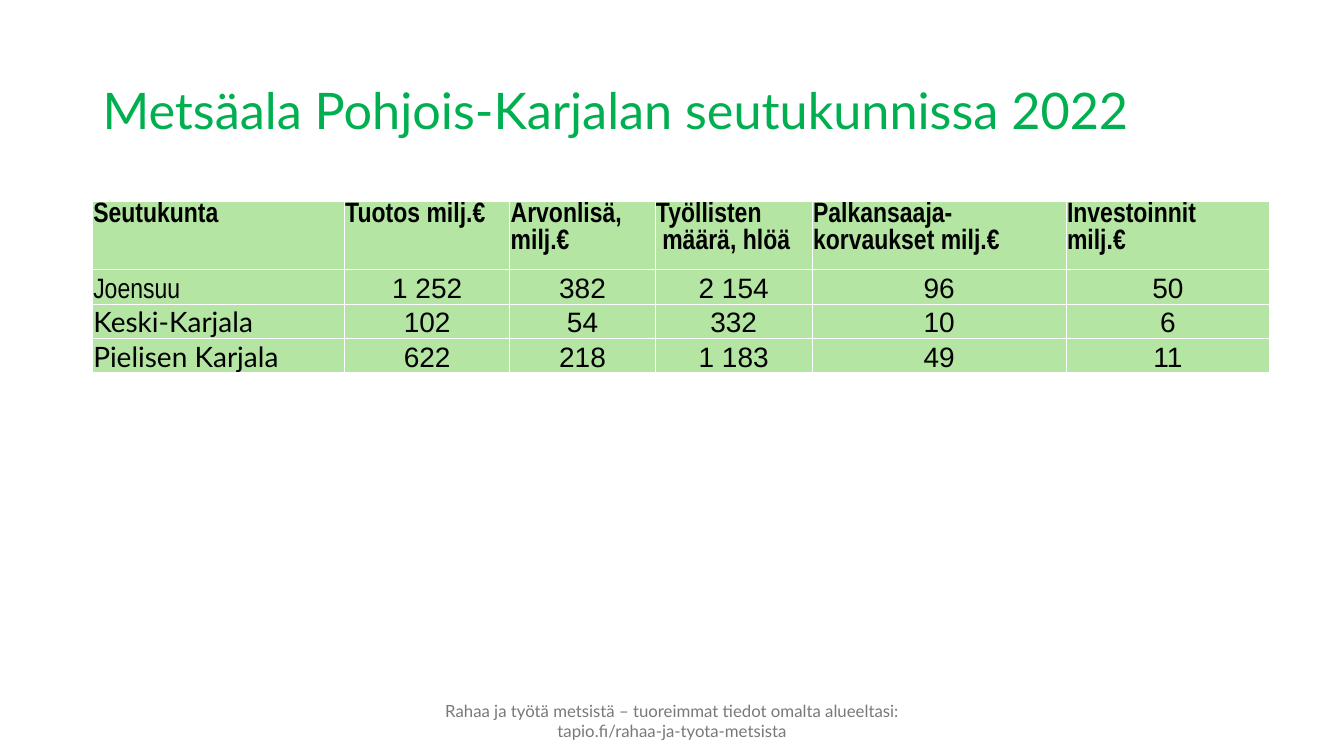
import dataclasses

import pptx
import pptx.dml.color
import pptx.enum.text
import pptx.oxml
import pptx.oxml.ns
import pptx.util

Cm = pptx.util.Cm
Pt = pptx.util.Pt
PP_ALIGN = pptx.enum.text.PP_ALIGN
MSO_ANCHOR = pptx.enum.text.MSO_ANCHOR


@dataclasses.dataclass(frozen=True)
class Theme:
    title: str = "00B050"
    footer: str = "797979"
    text: str = "000000"
    cell: str = "B4E5A2"
    border: str = "FFFFFF"
    title_size: int = 36
    table_size: int = 20
    footer_size: int = 12
    font: str = "Lato"
    narrow: str = "Arial Narrow"
    number: str = "Arial"


theme = Theme()


def add_run(p, text, font, size, color, bold=False):
    r = p.add_run()
    r.text = text
    r.font.name = font
    r.font.size = Pt(size)
    r.font.bold = bold
    r.font.color.rgb = pptx.dml.color.RGBColor.from_string(color)


def add_borders(cell):
    tc_pr = cell._tc.get_or_add_tcPr()
    for i, side in enumerate(("lnL", "lnR", "lnT", "lnB")):
        ln = pptx.oxml.parse_xml(
            f'<a:{side} {pptx.oxml.ns.nsdecls("a")} w="{Pt(1)}"><a:solidFill>'
            f'<a:srgbClr val="{theme.border}"/></a:solidFill></a:{side}>'
        )
        tc_pr.insert(i, ln)


prs = pptx.Presentation()
prs.slide_width = Cm(33.87)
prs.slide_height = Cm(19.05)
s = prs.slides.add_slide(prs.slide_layouts[5])

title = s.shapes.title
title.left, title.top, title.width, title.height = Cm(2.33), Cm(1.01), Cm(29.21), Cm(3.68)
tf = title.text_frame
tf.word_wrap = True
tf.auto_size = pptx.enum.text.MSO_AUTO_SIZE.NONE
tf.vertical_anchor = MSO_ANCHOR.MIDDLE
p = tf.paragraphs[0]
p.alignment = PP_ALIGN.LEFT
p.line_spacing = 0.9
p.space_before = Pt(0)
add_run(p, "Metsäala Pohjois-Karjalan seutukunnissa 2022", theme.font, theme.title_size, theme.title)

footer = s.shapes.add_textbox(Cm(10.82), Cm(17.66), Cm(12.24), Cm(1.01))
tf = footer.text_frame
tf.word_wrap = True
tf.vertical_anchor = MSO_ANCHOR.MIDDLE
p = tf.paragraphs[0]
p.alignment = PP_ALIGN.CENTER
add_run(
    p,
    "Rahaa ja työtä metsistä – tuoreimmat tiedot omalta alueeltasi: tapio.fi/rahaa-ja-tyota-metsista",
    theme.font, theme.footer_size, theme.footer,
)

rows = [
    ["Seutukunta", "Tuotos milj.€", "Arvonlisä, milj.€", "Työllisten\n määrä, hlöä",
     "Palkansaaja-korvaukset milj.€", "Investoinnit\nmilj.€"],
    ["Joensuu", "1 252", "382", "2 154", "96", "50"],
    ["Keski-Karjala", "102", "54", "332", "10", "6"],
    ["Pielisen Karjala", "622", "218", "1 183", "49", "11"],
]
label_fonts = [theme.narrow, theme.narrow, theme.font, theme.font]
col_widths = [6.35, 4.17, 3.66, 3.96, 6.4, 5.13]
row_heights = [1.45, 0.51, 0.51, 0.51]

table = s.shapes.add_table(
    len(rows), len(col_widths), Cm(2.33), Cm(5.08), Cm(sum(col_widths)), Cm(sum(row_heights))
).table
for col, width in zip(table.columns, col_widths):
    col.width = Cm(width)

for i, row in enumerate(rows):
    table.rows[i].height = Cm(row_heights[i])
    for j, text in enumerate(row):
        header = i == 0
        number = not header and j > 0
        inset = Cm(0 if number else 0.02)
        cell = table.cell(i, j)
        cell.margin_left = cell.margin_right = cell.margin_top = inset
        cell.margin_bottom = 0
        cell.vertical_anchor = MSO_ANCHOR.TOP if header else MSO_ANCHOR.BOTTOM
        cell.fill.solid()
        cell.fill.fore_color.rgb = pptx.dml.color.RGBColor.from_string(theme.cell)
        add_borders(cell)
        tf = cell.text_frame
        for k, line in enumerate(text.split("\n")):
            p = tf.add_paragraph() if k else tf.paragraphs[0]
            p.alignment = PP_ALIGN.CENTER if number else PP_ALIGN.LEFT
            font = theme.number if number else label_fonts[i]
            add_run(p, line, font, theme.table_size, theme.text, header)

prs.save("out.pptx")
